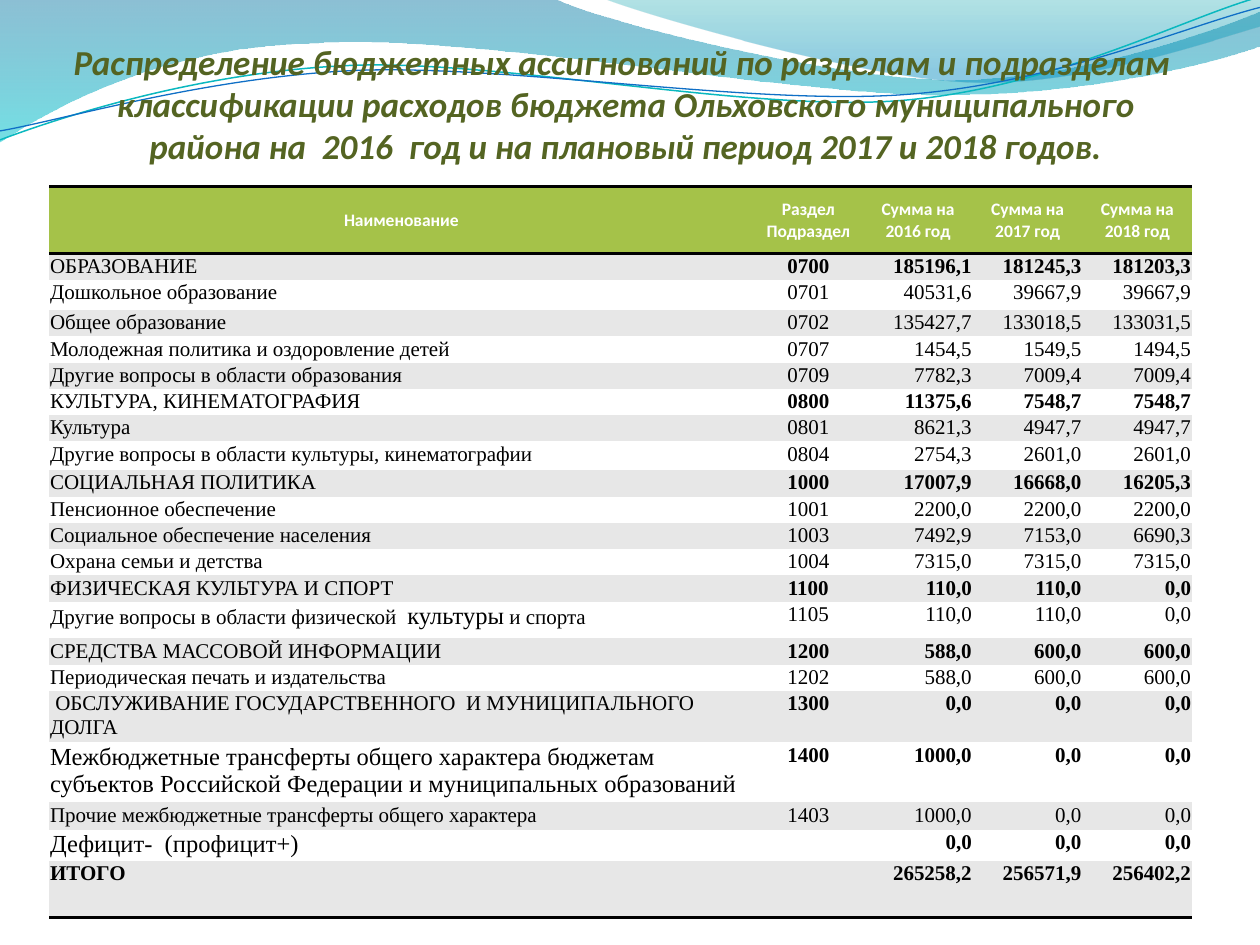
from math import cos, radians, sin

from lxml.etree import SubElement
from pptx import Presentation
from pptx.dml.color import RGBColor
from pptx.enum.text import MSO_ANCHOR as Anchor, PP_ALIGN as Align
from pptx.oxml.ns import qn
from pptx.util import Cm, Pt

WHITE = RGBColor(0xFF, 0xFF, 0xFF)
BLACK = RGBColor(0x00, 0x00, 0x00)
GREY = RGBColor(0xE7, 0xE7, 0xE7)
GREEN = RGBColor(0xA5, 0xC2, 0x49)
OLIVE = RGBColor(0x54, 0x64, 0x22)
DEEP_BLUE = RGBColor(0x00, 0x74, 0xA1)
AQUA = RGBColor(0x00, 0xC6, 0xCF)
TEAL = RGBColor(0x00, 0xA1, 0xA9)
SKY = RGBColor(0x00, 0x8B, 0xBF)
LINE_TEAL = RGBColor(0x0A, 0xB8, 0xBF)
LINE_BLUE = RGBColor(0x0F, 0x6F, 0xC6)
NO_TABLE_STYLE = "{2D5ABB26-0587-4C30-8999-92F81FD0307C}"

# Outlines in cm: a pair is a straight step, six numbers are a Bezier curve.
WIDE_RIBBON = [
    (0, 0), (11.18, -0.03), (12.09, 0.43, 16.87, 1.6, 19.25, 1.6),
    (21.67, 1.6, 24.33, 0.66, 25.4, 0.23), (25.43, 0.91),
    (24.97, 1.12, 22.1, 1.93, 18.95, 1.91), (15.8, 1.91, 9.7, 0.71, 6.53, 0.86),
    (3.28, 0.91, 1.17, 2.11, -0.03, 2.87)]
RIGHT_RIBBON = [
    (12.17, -0.03), (12.93, 0.28, 17.32, 1.57, 19.53, 1.65),
    (21.74, 1.75, 24.41, 0.81, 25.4, 0.53), (25.4, 0)]
TEAL_WAVE = [
    (0, 2.82), (1.22, 2.36, 4.01, 1.45, 7.04, 1.32),
    (10.03, 1.19, 15.06, 2.26, 18.11, 2.03), (21.16, 1.8, 23.83, 0.38, 25.35, -0.05)]
BLUE_WAVE = [
    (0, 2.64), (1.19, 2.44, 4.17, 1.55, 7.19, 1.42),
    (10.24, 1.3, 15.16, 2.13, 18.21, 1.91), (21.23, 1.7, 23.9, 0.53, 25.4, 0.15)]
WAVE_TILT = -2.7

TITLE = ("Распределение бюджетных ассигнований по разделам и подразделам  классификации "
         "расходов бюджета Ольховского муниципального района на  2016  год и на плановый "
         "период 2017 и 2018 годов.")
HEADER = ["Наименование", "Раздел Подраздел", "Сумма на 2016 год",
          "Сумма на\n2017 год", "Сумма на 2018 год"]
ROW = 0.53
# Height in cm, name (a list holds text and size pairs), code, three yearly sums.
BUDGET = [
    (ROW, "ОБРАЗОВАНИЕ", "0700", "185196,1", "181245,3", "181203,3"),
    (0.61, "Дошкольное образование", "0701", "40531,6", "39667,9", "39667,9"),
    (ROW, "Общее образование", "0702", "135427,7", "133018,5", "133031,5"),
    (ROW, "Молодежная политика и оздоровление детей", "0707", "1454,5", "1549,5", "1494,5"),
    (ROW, "Другие вопросы в области образования", "0709", "7782,3", "7009,4", "7009,4"),
    (ROW, "КУЛЬТУРА, КИНЕМАТОГРАФИЯ", "0800", "11375,6", "7548,7", "7548,7"),
    (ROW, "Культура", "0801", "8621,3", "4947,7", "4947,7"),
    (0.58, "Другие вопросы в области культуры, кинематографии", "0804",
     "2754,3", "2601,0", "2601,0"),
    (ROW, "СОЦИАЛЬНАЯ ПОЛИТИКА", "1000", "17007,9", "16668,0", "16205,3"),
    (ROW, "Пенсионное обеспечение", "1001", "2200,0", "2200,0", "2200,0"),
    (ROW, "Социальное обеспечение населения", "1003", "7492,9", "7153,0", "6690,3"),
    (ROW, "Охрана семьи и детства", "1004", "7315,0", "7315,0", "7315,0"),
    (ROW, "ФИЗИЧЕСКАЯ КУЛЬТУРА И СПОРТ", "1100", "110,0", "110,0", "0,0"),
    (0.74, [("Другие вопросы в области физической  ", 12), ("культуры", 14),
            (" и спорта", 12)], "1105", "110,0", "110,0", "0,0"),
    (ROW, "СРЕДСТВА МАССОВОЙ ИНФОРМАЦИИ", "1200", "588,0", "600,0", "600,0"),
    (ROW, "Периодическая печать и издательства", "1202", "588,0", "600,0", "600,0"),
    (1.02, " ОБСЛУЖИВАНИЕ ГОСУДАРСТВЕННОГО  И МУНИЦИПАЛЬНОГО ДОЛГА", "1300",
     "0,0", "0,0", "0,0"),
    (1.19, [("Межбюджетные трансферты общего характера бюджетам субъектов Российской "
             "Федерации и муниципальных образований", 14)], "1400", "1000,0", "0,0", "0,0"),
    (0.56, "Прочие межбюджетные трансферты общего характера", "1403", "1000,0", "0,0", "0,0"),
    (0.61, [("Дефицит-  (профицит+)", 14)], "", "0,0", "0,0", "0,0"),
    (1.14, "ИТОГО", "", "265258,2", "256571,9", "256402,2"),
]


def turn(outline, degrees, center):
    c, s = cos(radians(degrees)), sin(radians(degrees))
    cx, cy = center
    turned = []
    for part in outline:
        pairs = zip(part[::2], part[1::2])
        turned.append(tuple(value for x, y in pairs for value in (
            cx + (x - cx) * c - (y - cy) * s, cy + (x - cx) * s + (y - cy) * c)))
    return turned


class BudgetPage:
    """Holds the fonts and the slide being filled."""
    title_font = "Calibri"
    body_font = "Times New Roman"

    def __init__(self, page):
        self.page = page

    def outline(self, outline, closed):
        """Build a freeform, joining every three steps of a curve into one Bezier."""
        points = [(Cm(x), Cm(y)) for part in outline for x, y in zip(part[::2], part[1::2])]
        builder = self.page.shapes.build_freeform(*points[0])
        builder.add_line_segments(points[1:], close=closed)
        shape = builder.convert_to_shape()
        shape.shadow.inherit = False
        steps = iter(list(shape._element.iter(qn("a:lnTo"))))
        for part in outline[1:]:
            step = next(steps)
            if len(part) == 6:
                step.tag = qn("a:cubicBezTo")
                for extra in (next(steps), next(steps)):
                    step.append(extra[0])
                    extra.getparent().remove(extra)
        return shape

    def ribbon(self, outline, stops):
        """Draw a band fading downwards; stops are (position, colour, opacity %)."""
        shape = self.outline(outline, True)
        shape.line.fill.background()
        shape.fill.gradient()
        shape.fill.gradient_angle = 270
        for stop, (position, color, _) in zip(shape.fill.gradient_stops, stops):
            stop.position = position
            stop.color.rgb = color
        for mark, (_, _, opacity) in zip(shape._element.spPr.iter(qn("a:srgbClr")), stops):
            SubElement(mark, qn("a:alpha"), val=str(opacity * 1000))

    def wave(self, outline, color, width, center):
        shape = self.outline(turn(outline, -WAVE_TILT, center), False)
        shape.rotation = WAVE_TILT
        shape.fill.background()
        shape.line.color.rgb = color
        shape.line.width = Pt(width)

    def style(self, paragraph, font, size, color, bold, align):
        paragraph.alignment = align
        paragraph.font.name = font
        paragraph.font.size = Pt(size)
        paragraph.font.color.rgb = color
        paragraph.font.bold = bold

    def title(self, text, left, top, width, height):
        box = self.page.shapes.add_textbox(Cm(left), Cm(top), Cm(width), Cm(height))
        frame = box.text_frame
        frame.word_wrap = True
        frame.vertical_anchor = Anchor.BOTTOM
        frame.margin_left = frame.margin_right = frame.margin_bottom = 0
        frame.text = text
        self.style(frame.paragraphs[0], self.title_font, 20, OLIVE, True, Align.CENTER)
        frame.paragraphs[0].font.italic = True

    def cell(self, cell, content, fill, font, size, color, bold, align):
        cell.fill.solid()
        cell.fill.fore_color.rgb = fill
        cell.margin_left = cell.margin_right = cell.margin_top = Cm(0.02)
        cell.margin_bottom = 0
        if isinstance(content, str):
            cell.text = content
        else:
            for text, points in content:
                span = cell.text_frame.paragraphs[0].add_run()
                span.text, span.font.size = text, Pt(points)
        for paragraph in cell.text_frame.paragraphs:
            self.style(paragraph, font, size, color, bold, align)

    def rule(self, cell, *sides):
        for place, side in enumerate(sides):
            edge = cell._tc.get_or_add_tcPr()
            line = SubElement(edge, qn("a:" + side), w=str(Pt(2)))
            edge.insert(place, line)
            SubElement(SubElement(line, qn("a:solidFill")), qn("a:srgbClr"), val=str(BLACK))

    def table(self, left, top, widths, header_height):
        heights = [header_height] + [row[0] for row in BUDGET]
        table = self.page.shapes.add_table(len(heights), len(widths), Cm(left), Cm(top),
                                           Cm(sum(widths)), Cm(sum(heights))).table
        table._tbl.tblPr.find(qn("a:tableStyleId")).text = NO_TABLE_STYLE
        table.horz_banding = False
        for column, width in zip(table.columns, widths):
            column.width = Cm(width)
        for row, height in zip(table.rows, heights):
            row.height = Cm(height)
        for cell, text in zip(table.rows[0].cells, HEADER):
            self.cell(cell, text, GREEN, self.title_font, 10, WHITE, True, Align.CENTER)
            cell.vertical_anchor = Anchor.MIDDLE
            self.rule(cell, "lnT", "lnB")
        aligns = [Align.LEFT, Align.CENTER] + [Align.RIGHT] * 3
        for number, (_, *values) in enumerate(BUDGET):
            name, code = values[:2]
            section = not code or code.endswith("00")
            for index, (value, align) in enumerate(zip(values, aligns)):
                bold = name == "ИТОГО" or (section and index > 0)
                self.cell(table.cell(number + 1, index), value, WHITE if number % 2 else GREY,
                          self.body_font, 12, BLACK, bold, align)
        for cell in table.rows[len(BUDGET)].cells:
            self.rule(cell, "lnB")


def main():
    deck = Presentation()
    deck.slide_width, deck.slide_height = Cm(25.4), Cm(19.05)
    budget = BudgetPage(deck.slides.add_slide(deck.slide_layouts[6]))
    budget.ribbon(WIDE_RIBBON, [(0, DEEP_BLUE, 45), (1, AQUA, 55)])
    budget.ribbon(RIGHT_RIBBON, [(0, TEAL, 30), (0.8, SKY, 45)])
    budget.wave(TEAL_WAVE, LINE_TEAL, 0.85, (12.67, 1.46))
    budget.wave(BLUE_WAVE, LINE_BLUE, 0.75, (12.69, 1.5))
    budget.title(TITLE, 1.19, 0.58, 22.86, 2.77)
    budget.table(0.99, 3.76, [14.2] + [2.21] * 4, 1.35)
    deck.save("out.pptx")


if __name__ == "__main__":
    main()
